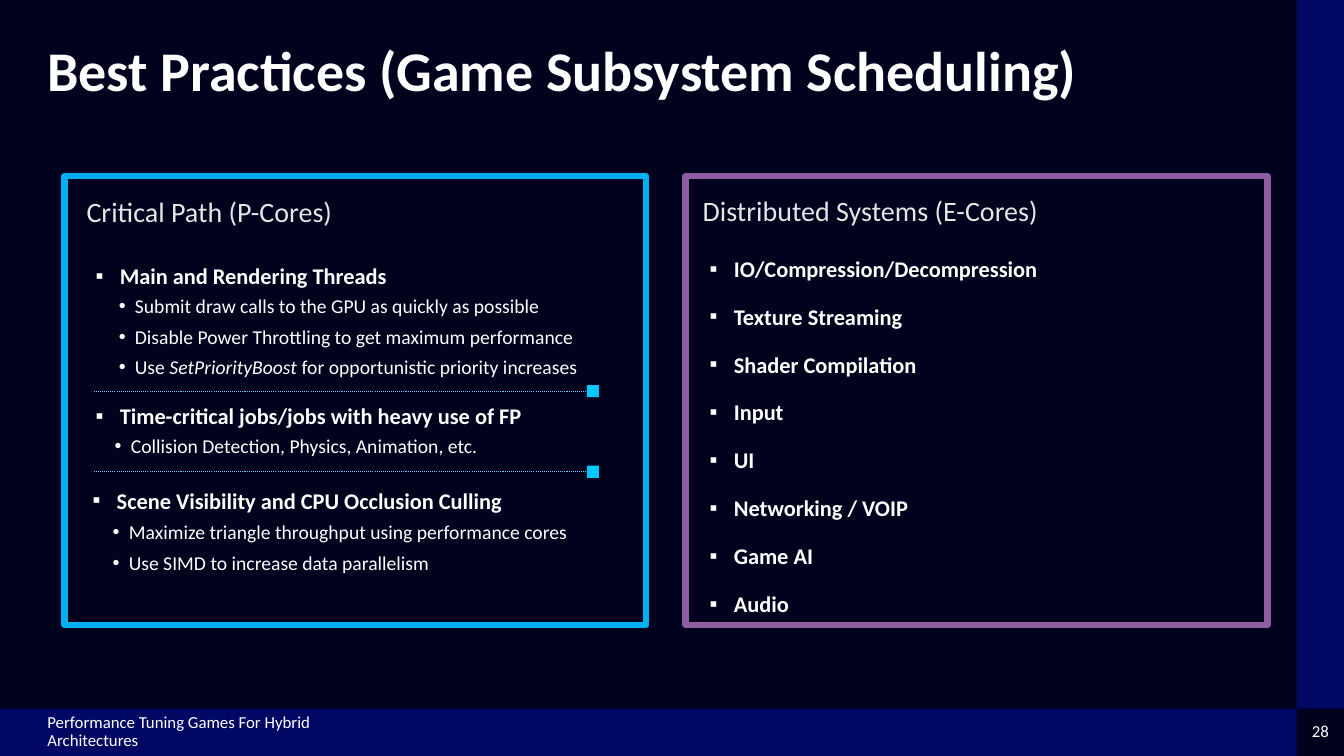
"""Build the game subsystem scheduling slide with two core-type panels."""
from dataclasses import dataclass

from lxml import etree
from pptx import Presentation
from pptx.dml.color import RGBColor
from pptx.enum.dml import MSO_LINE
from pptx.enum.shapes import MSO_CONNECTOR, MSO_SHAPE
from pptx.enum.text import MSO_ANCHOR, MSO_AUTO_SIZE, PP_ALIGN
from pptx.oxml.ns import qn
from pptx.util import Inches, Pt

RECT, ROUNDED = MSO_SHAPE.RECTANGLE, MSO_SHAPE.ROUNDED_RECTANGLE
STRAIGHT, DOTTED = MSO_CONNECTOR.STRAIGHT, MSO_LINE.ROUND_DOT
TOP, MIDDLE = MSO_ANCHOR.TOP, MSO_ANCHOR.MIDDLE
LEFT, CENTER = PP_ALIGN.LEFT, PP_ALIGN.CENTER
GROW, FIXED = MSO_AUTO_SIZE.SHAPE_TO_FIT_TEXT, MSO_AUTO_SIZE.NONE

TITLE = "Best Practices (Game Subsystem Scheduling)"
FOOTER = "Performance Tuning Games For Hybrid Architectures"
PAGE_NUMBER = "28"
CRITICAL_HEADING = "Critical Path (P-Cores)"
DISTRIBUTED_HEADING = "Distributed Systems (E-Cores)"

# Each place is (left, top, width) in percent of the slide.
CRITICAL_TOPICS = [
    ("Main and Rendering Threads", (6.38, 34, 31.88), [
        "Submit draw calls to the GPU as quickly as possible",
        "Disable Power Throttling to get maximum performance",
        ("Use ", "SetPriorityBoost", " for opportunistic priority increases"),
    ], (8.1, 38.27, 40.14)),
    ("Time-critical jobs/jobs with heavy use of FP", (6.38, 52.53, 37.58), [
        "Collision Detection, Physics, Animation, etc.",
    ], (7.8, 56.8, 41.71)),
    ("Scene Visibility and CPU Occlusion Culling", (6.15, 63.73, 41.71), [
        "Maximize triangle throughput using performance cores",
        "Use SIMD to increase data parallelism",
    ], (7.65, 68.13, 41.71)),
]
DISTRIBUTED_SYSTEMS = [
    "IO/Compression/Decompression", "Texture Streaming", "Shader Compilation",
    "Input", "UI", "Networking / VOIP", "Game AI", "Audio",
]


@dataclass(frozen=True)
class Theme:
    font: str = "Calibri"
    background: str = "00021E"
    band: str = "000864"
    text: str = "FFFFFF"
    heading: str = "E6E6E6"
    critical: str = "00B0F0"
    distributed: str = "8F5DA2"
    divider: str = "75C4FF"
    marker: str = "00C7FD"
    title_size: int = 40
    heading_size: int = 20
    topic_size: int = 16
    point_size: int = 14
    footer_size: int = 12


THEME = Theme()
WIDTH, HEIGHT = Inches(13.33), Inches(7.5)
RAIL_W, RAIL_H = 3.53, 6.27
PANEL_TOP, PANEL_W, PANEL_H = 23.33, 43.29, 59.33
CRITICAL_LEFT, DISTRIBUTED_LEFT = 4.8, 51.01
DIVIDER_START, DIVIDER_END = 6.98, 44.11
DIVIDER_ROWS = (51.73, 62.4)
MARKER_W, MARKER_H = 0.9, 1.6
LINE_H, POINT_H, POINT_PITCH = 4.93, 4.53, 4.07
HEADING_H = 5.87

prs = Presentation()
prs.slide_width, prs.slide_height = WIDTH, HEIGHT
slide = prs.slides.add_slide(prs.slide_layouts[6])


def place(left, top, width, height):
    return (round(WIDTH * left / 100), round(HEIGHT * top / 100),
            round(WIDTH * width / 100), round(HEIGHT * height / 100))


def color(value):
    return RGBColor.from_string(value)


def add_box(area, fill=None, outline=None, kind=RECT):
    box = slide.shapes.add_shape(kind, *place(*area))
    box.shadow.inherit = False
    if fill:
        box.fill.solid()
        box.fill.fore_color.rgb = color(fill)
    else:
        box.fill.background()
    if outline:
        box.line.color.rgb = color(outline)
        box.line.width = Pt(4.5)
    else:
        box.line.fill.background()
    return box


def add_bullet(paragraph, symbol, indent):
    properties = paragraph._p.get_or_add_pPr()
    properties.set("marL", str(Inches(indent)))
    properties.set("indent", str(-Inches(indent)))
    bullet_color = etree.SubElement(properties, qn("a:buClr"))
    etree.SubElement(bullet_color, qn("a:srgbClr"), val=THEME.text)
    etree.SubElement(properties, qn("a:buFont"), typeface="Arial")
    etree.SubElement(properties, qn("a:buChar"), char=symbol)


def add_text(area, lines, size, ink=THEME.text, bold=False, align=LEFT,
             anchor=TOP, padded=True, spacing=None, gap=0, bullet=None, indent=0):
    frame = slide.shapes.add_textbox(*place(*area)).text_frame
    frame.word_wrap = True
    frame.auto_size = GROW if padded else FIXED
    frame.vertical_anchor = anchor
    frame.margin_left = frame.margin_right = Inches(0.1 if padded else 0)
    frame.margin_top = frame.margin_bottom = Inches(0.05 if padded else 0)
    for row, line in enumerate(lines):
        paragraph = frame.add_paragraph() if row else frame.paragraphs[0]
        paragraph.alignment = align
        if spacing:
            paragraph.line_spacing = spacing
        if row and gap:
            paragraph.space_before = Pt(gap)
        if bullet:
            add_bullet(paragraph, bullet, indent)
        pieces = (line,) if isinstance(line, str) else line
        for position, piece in enumerate(pieces):
            run = paragraph.add_run()
            run.text = piece
            run.font.name, run.font.size = THEME.font, Pt(size)
            run.font.bold, run.font.italic = bold, position % 2 == 1
            run.font.color.rgb = color(ink)


def add_divider(row):
    left, top, length, _ = place(DIVIDER_START, row, DIVIDER_END - DIVIDER_START, 0)
    rule = slide.shapes.add_connector(STRAIGHT, left, top, left + length, top)
    rule.line.color.rgb = color(THEME.divider)
    rule.line.width, rule.line.dash_style = Pt(0.75), DOTTED
    etree.SubElement(rule._element.spPr, qn("a:effectLst"))
    add_box((DIVIDER_END - MARKER_W / 2, row - MARKER_H / 2, MARKER_W, MARKER_H),
            fill=THEME.marker)


def add_panel(left, outline, heading, heading_area):
    panel = add_box((left, PANEL_TOP, PANEL_W, PANEL_H), outline=outline, kind=ROUNDED)
    panel.adjustments[0] = 0
    add_text((*heading_area, HEADING_H), [heading], THEME.heading_size, ink=THEME.heading)


def main():
    slide.background.fill.solid()
    slide.background.fill.fore_color.rgb = color(THEME.background)
    rail_left, rail_top = 100 - RAIL_W, 100 - RAIL_H
    add_box((0, rail_top, rail_left, RAIL_H), fill=THEME.band)
    add_box((rail_left, 0, RAIL_W, rail_top), fill=THEME.band)

    add_text((RAIL_W, RAIL_H, 89.35, 17.87), [TITLE], THEME.title_size,
             bold=True, padded=False, spacing=0.83)
    add_text((RAIL_W, rail_top, 26.41, RAIL_H), [FOOTER], THEME.footer_size,
             anchor=MIDDLE, padded=False, spacing=0.9)
    add_text((rail_left, rail_top, RAIL_W, RAIL_H), [PAGE_NUMBER], THEME.footer_size,
             align=CENTER, anchor=MIDDLE, padded=False, spacing=0.9)

    add_panel(CRITICAL_LEFT, THEME.critical, CRITICAL_HEADING, (5.7, 25.07, 40.14))
    add_panel(DISTRIBUTED_LEFT, THEME.distributed, DISTRIBUTED_HEADING,
              (51.54, 24.93, 38.93))

    for topic, topic_area, points, points_area in CRITICAL_TOPICS:
        add_text((*topic_area, LINE_H), [topic], THEME.topic_size, bold=True,
                 bullet="▪", indent=0.24)
        points_height = POINT_H + POINT_PITCH * (len(points) - 1)
        add_text((*points_area, points_height), points, THEME.point_size, gap=5,
                 bullet="•", indent=0.16)
    for row in DIVIDER_ROWS:
        add_divider(row)

    add_text((52.06, 33.07, 38.93, 49.73), DISTRIBUTED_SYSTEMS, THEME.topic_size,
             bold=True, gap=15, bullet="▪", indent=0.24)
    prs.save("out.pptx")


if __name__ == "__main__":
    main()
